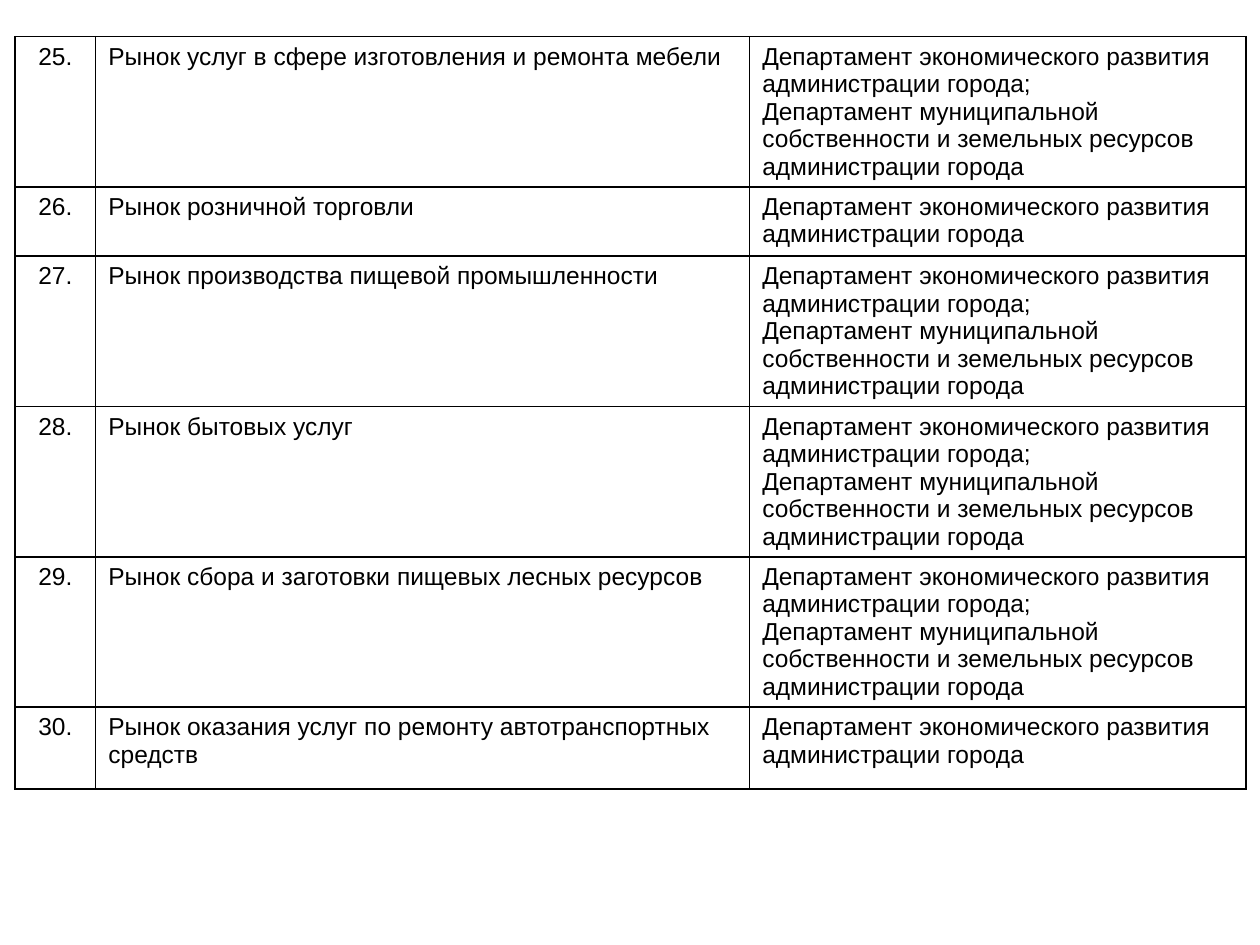
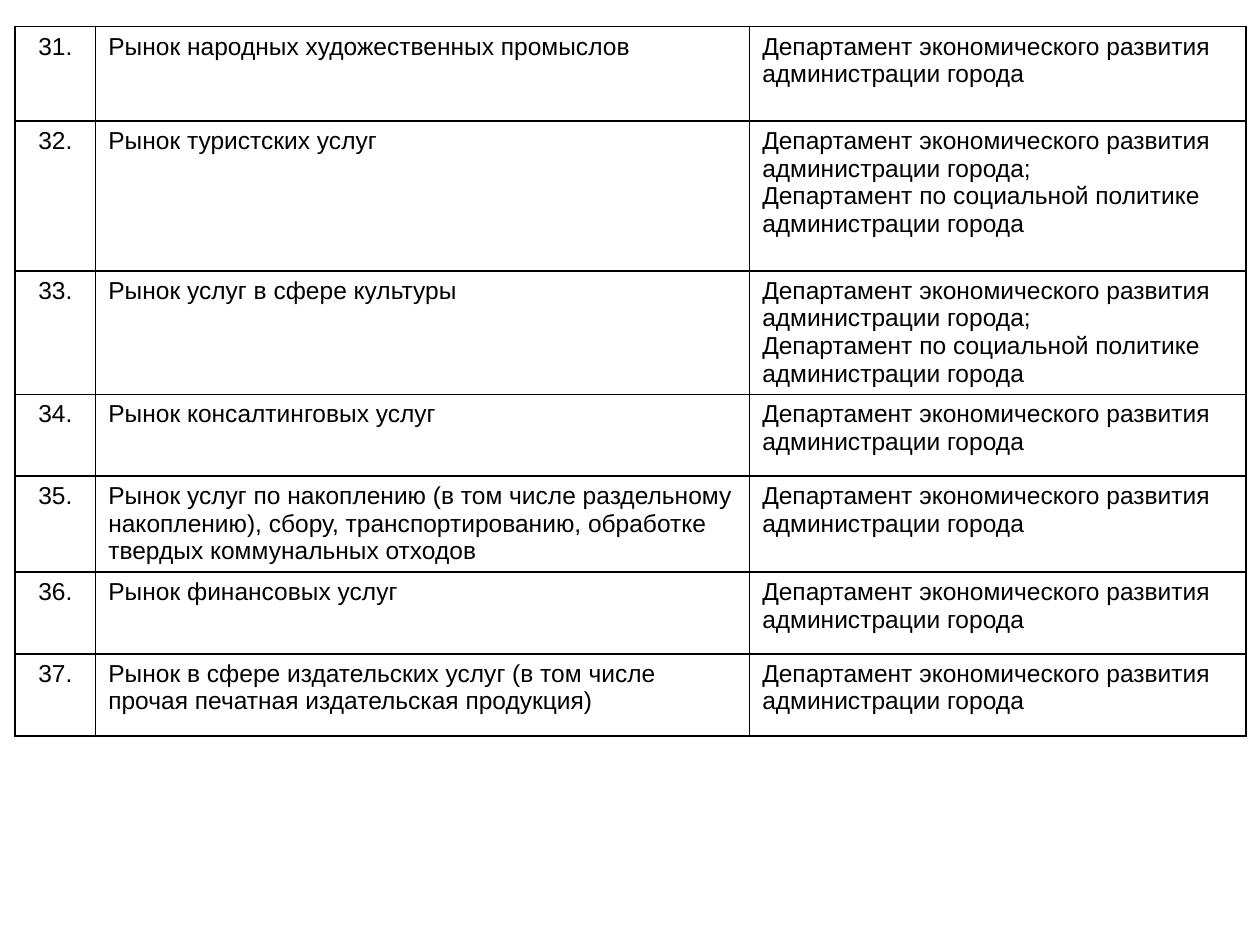
from lxml import etree
from pptx import Presentation
from pptx.dml.color import RGBColor
from pptx.enum.text import PP_ALIGN as Align
from pptx.oxml.ns import qn
from pptx.util import Inches, Pt

COLORS = {"text": "000000", "border": "000000", "fill": "FFFFFF"}
FONT = "Arial"
COLUMN_WIDTHS = [0.64, 5.19, 3.94]
TABLE_LEFT = 0.12

ECONOMY = "Департамент экономического развития администрации города"
PROPERTY = "Департамент муниципальной собственности и земельных ресурсов администрации города"
SOCIAL = "Департамент по социальной политике администрации города"

PAGES = [
    {"top": 0.29, "first_number": 25, "markets": [
        ("Рынок услуг в сфере изготовления и ремонта мебели", [ECONOMY, PROPERTY], 1.19),
        ("Рынок розничной торговли", [ECONOMY], 0.55),
        ("Рынок производства пищевой промышленности", [ECONOMY, PROPERTY], 1.19),
        ("Рынок бытовых услуг", [ECONOMY, PROPERTY], 1.19),
        ("Рынок сбора и заготовки пищевых лесных ресурсов", [ECONOMY, PROPERTY], 1.19),
        ("Рынок оказания услуг по ремонту автотранспортных средств", [ECONOMY], 0.65),
    ]},
    {"top": 0.21, "first_number": 31, "markets": [
        ("Рынок народных художественных промыслов", [ECONOMY], 0.75),
        ("Рынок туристских услуг", [ECONOMY, SOCIAL], 1.19),
        ("Рынок услуг в сфере культуры", [ECONOMY, SOCIAL], 0.98),
        ("Рынок консалтинговых услуг", [ECONOMY], 0.65),
        ("Рынок услуг по накоплению (в том числе раздельному накоплению), сбору, "
         "транспортированию, обработке твердых коммунальных отходов", [ECONOMY], 0.76),
        ("Рынок финансовых услуг", [ECONOMY], 0.65),
        ("Рынок в сфере издательских услуг (в том числе прочая печатная "
         "издательская продукция)", [ECONOMY], 0.65),
    ]},
]


def write_cell(cell, text, size=14, color=COLORS["text"], align=Align.LEFT):
    for index, line in enumerate(text.split("\n")):
        frame = cell.text_frame
        para = frame.add_paragraph() if index else frame.paragraphs[0]
        para.alignment = align
        span = para.add_run()
        span.text = line
        span.font.name = FONT
        span.font.size = Pt(size)
        span.font.color.rgb = RGBColor.from_string(color)


def style_cell(cell, width=1):
    properties = cell._tc.get_or_add_tcPr()
    for side in ("a:lnL", "a:lnR", "a:lnT", "a:lnB"):
        line = etree.SubElement(properties, qn(side), w=str(Pt(width)))
        fill = etree.SubElement(line, qn("a:solidFill"))
        etree.SubElement(fill, qn("a:srgbClr"), val=COLORS["border"])
    cell.fill.solid()
    cell.fill.fore_color.rgb = RGBColor.from_string(COLORS["fill"])


deck = Presentation()
deck.slide_width = Inches(10)
deck.slide_height = Inches(7.5)

for content in PAGES:
    page = deck.slides.add_slide(deck.slide_layouts[6])
    markets = content["markets"]
    total_height = sum(height for _, _, height in markets)
    table = page.shapes.add_table(
        len(markets), len(COLUMN_WIDTHS), Inches(TABLE_LEFT), Inches(content["top"]),
        Inches(sum(COLUMN_WIDTHS)), Inches(total_height)).table
    table.first_row = False
    table.horz_banding = False
    for column, width in zip(table.columns, COLUMN_WIDTHS):
        column.width = Inches(width)

    for index, (market, departments, height) in enumerate(markets):
        row = table.rows[index]
        row.height = Inches(height)
        number_cell, market_cell, department_cell = row.cells
        write_cell(number_cell, f"{content['first_number'] + index}.", align=Align.CENTER)
        write_cell(market_cell, market)
        write_cell(department_cell, ";\n".join(departments))
        for cell in row.cells:
            style_cell(cell)

deck.save("out.pptx")
